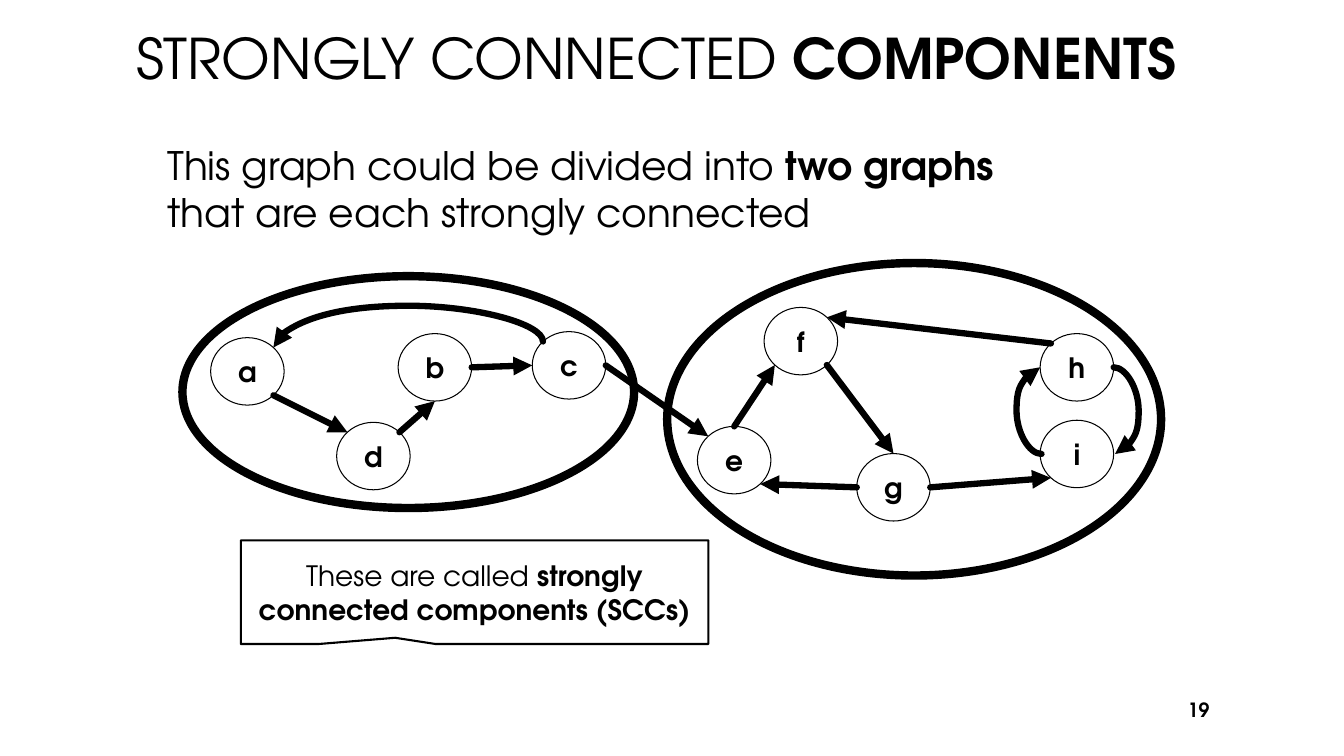
"""Builds a slide on the strongly connected components of a directed graph."""
from math import cos, radians, sin

from lxml import etree
from pptx import Presentation
from pptx import util as u
from pptx.dml.color import RGBColor
from pptx.enum import shapes, text
from pptx.oxml.ns import qn

Pt = u.Pt
FONT = "TeX Gyre Adventor"
COLORS = {"ink": "000000", "paper": "FFFFFF"}
NODE_W, NODE_H = 52.5, 48.2
NODES = {
    "a": (150.5, 241.2), "b": (284.4, 238.3), "c": (380.2, 236.9),
    "d": (240.5, 301.7), "e": (498.2, 304.6), "f": (545.8, 219.6),
    "g": (612, 324), "h": (743, 238.3), "i": (743, 300.2),
}
ANGLES = {"right": 0, "bottom right": 45, "bottom": 90, "bottom left": 135,
          "left": 180, "top left": 225, "top": 270, "top right": 315}
EDGES = [
    ("a", "bottom right", "d", "top left"),
    ("d", "top right", "b", "bottom"),
    ("b", "right", "c", "left"),
    ("c", "right", "e", "top left"),
    ("e", "top", "f", "bottom left"),
    ("f", "bottom right", "g", "top"),
    ("g", "left", "e", "bottom right"),
    ("g", "right", "i", "bottom left"),
    ("h", "top left", "f", "top right"),
]
COMPONENTS = [(130.3, 197.3, 322.6, 165.6), (476.6, 187.9, 352.8, 223.2)]


def color(name):
    """Return a named colour."""
    return RGBColor.from_string(COLORS[name])


def add_run(p, content, size, bold=False):
    """Add one run of text to a paragraph."""
    r = p.add_run()
    r.text = content
    r.font.name = FONT
    r.font.size = Pt(size)
    r.font.bold = bold
    r.font.color.rgb = color("ink")


def set_box(sp, left, top, width, height):
    """Place a shape."""
    sp.left, sp.top, sp.width, sp.height = map(Pt, (left, top, width, height))


def add_title(s, light, strong):
    """Fill and place the title placeholder."""
    sp = s.shapes.title
    set_box(sp, 90, 0, 780, 81)
    tf = sp.text_frame
    tf.word_wrap = True
    tf.auto_size = text.MSO_AUTO_SIZE.NONE
    tf.vertical_anchor = text.MSO_ANCHOR.MIDDLE
    p = tf.paragraphs[0]
    p.alignment = text.PP_ALIGN.LEFT
    add_run(p, light, 40)
    add_run(p, strong, 40, True)


def add_text(s, box, anchor, align):
    """Add a wrapping text box and return its paragraph."""
    tf = s.shapes.add_textbox(*map(Pt, box)).text_frame
    tf.word_wrap = True
    tf.vertical_anchor = anchor
    p = tf.paragraphs[0]
    p.alignment = align
    return p


def add_outlined(s, kind, box, weight, filled=True):
    """Add an outlined shape and return it with its centred paragraph."""
    sp = s.shapes.add_shape(kind, *map(Pt, box))
    sp.shadow.inherit = False
    if filled:
        sp.fill.solid()
        sp.fill.fore_color.rgb = color("paper")
    else:
        sp.fill.background()
    sp.line.color.rgb = color("ink")
    sp.line.width = Pt(weight)
    tf = sp.text_frame
    tf.word_wrap = True
    tf.vertical_anchor = text.MSO_ANCHOR.MIDDLE
    p = tf.paragraphs[0]
    p.alignment = text.PP_ALIGN.CENTER
    return sp, p


def add_node(s, name):
    """Add a labelled graph node."""
    box = (*NODES[name], NODE_W, NODE_H)
    sp, p = add_outlined(s, shapes.MSO_SHAPE.OVAL, box, 0.75)
    tf = sp.text_frame
    tf.margin_left = tf.margin_right = tf.margin_top = tf.margin_bottom = 0
    add_run(p, name, 20, True)


def rim(name, side):
    """Return the point on a node's rim at the given side."""
    left, top = NODES[name]
    angle = radians(ANGLES[side])
    return (left + NODE_W / 2 * (1 + cos(angle)),
            top + NODE_H / 2 * (1 + sin(angle)))


def add_arrow(s, begin, end, kind=shapes.MSO_CONNECTOR.STRAIGHT):
    """Add a thick arrow between two points."""
    cxn = s.shapes.add_connector(kind, *map(Pt, (*begin, *end)))
    cxn.line.color.rgb = color("ink")
    cxn.line.width = Pt(4.5)
    ln = cxn.line._get_or_add_ln()
    ln.set("cap", "rnd")
    etree.SubElement(ln, qn("a:tailEnd"), type="triangle")
    etree.SubElement(cxn._element.spPr, qn("a:effectLst"))
    return cxn


def bend(cxn, ratio):
    """Set how far a curved arrow swings, relative to its width."""
    geom = cxn._element.spPr.find(qn("a:prstGeom"))
    guides = geom.find(qn("a:avLst"))
    if guides is None:
        guides = etree.SubElement(geom, qn("a:avLst"))
    etree.SubElement(guides, qn("a:gd"), name="adj1",
                     fmla=f"val {round(ratio * 100000)}")


def add_side_curve(s, begin, end, swing):
    """Add an arrow that swings out sideways."""
    bend(add_arrow(s, begin, end, shapes.MSO_CONNECTOR.CURVE),
         swing / (end[0] - begin[0]))


def add_top_curve(s, begin, end, rise):
    """Add an arrow that runs leftwards over an arch."""
    mid_x, mid_y = (begin[0] + end[0]) / 2, (begin[1] + end[1]) / 2
    run, drop = begin[0] - end[0], end[1] - begin[1]
    cxn = add_arrow(s, (mid_x + drop / 2, mid_y + run / 2),
                    (mid_x - drop / 2, mid_y - run / 2),
                    shapes.MSO_CONNECTOR.CURVE)
    cxn._element.spPr.find(qn("a:xfrm")).set("rot", str(270 * 60000))
    bend(cxn, -rise / drop)


def main():
    """Build and save the slide."""
    prs = Presentation()
    prs.slide_width, prs.slide_height = Pt(960), Pt(540)
    s = prs.slides.add_slide(prs.slide_layouts[5])
    add_title(s, "STRONGLY CONNECTED ", "COMPONENTS")

    p = add_text(s, (90, 97.2, 780, 80), text.MSO_ANCHOR.TOP,
                 text.PP_ALIGN.LEFT)
    p._p.get_or_add_pPr().set("marL", str(Pt(22.5)))
    p.space_before, p.space_after = Pt(5.6), Pt(6)
    add_run(p, "This graph could be divided into ", 28)
    add_run(p, "two graphs", 28, True)
    p.add_line_break()
    add_run(p, "that are each strongly connected", 28)

    for name in NODES:
        add_node(s, name)
    for source, source_side, target, target_side in EDGES:
        add_arrow(s, rim(source, source_side), rim(target, target_side))
    add_top_curve(s, rim("c", "top left"), rim("a", "top right"), 25.5)
    h_right, i_right = rim("h", "right"), rim("i", "right")
    add_side_curve(s, h_right, (i_right[0] + 1, i_right[1]), 18)
    h_left, i_left = rim("h", "left"), rim("i", "left")
    add_side_curve(s, (i_left[0] + 1, i_left[1]), h_left, -18)
    for box in COMPONENTS:
        add_outlined(s, shapes.MSO_SHAPE.OVAL, box, 6, filled=False)

    callout, p = add_outlined(s, shapes.MSO_SHAPE.RECTANGULAR_CALLOUT,
                              (172, 386, 334, 74), 1.5)
    callout.adjustments[0], callout.adjustments[1] = -0.17, 0.44
    add_run(p, "These are called ", 20)
    add_run(p, "strongly connected components (SCCs)", 20, True)

    p = add_text(s, (828, 492.5, 43.2, 28.8), text.MSO_ANCHOR.MIDDLE,
                 text.PP_ALIGN.RIGHT)
    add_run(p, "19", 14, True)
    prs.save("out.pptx")


if __name__ == "__main__":
    main()
